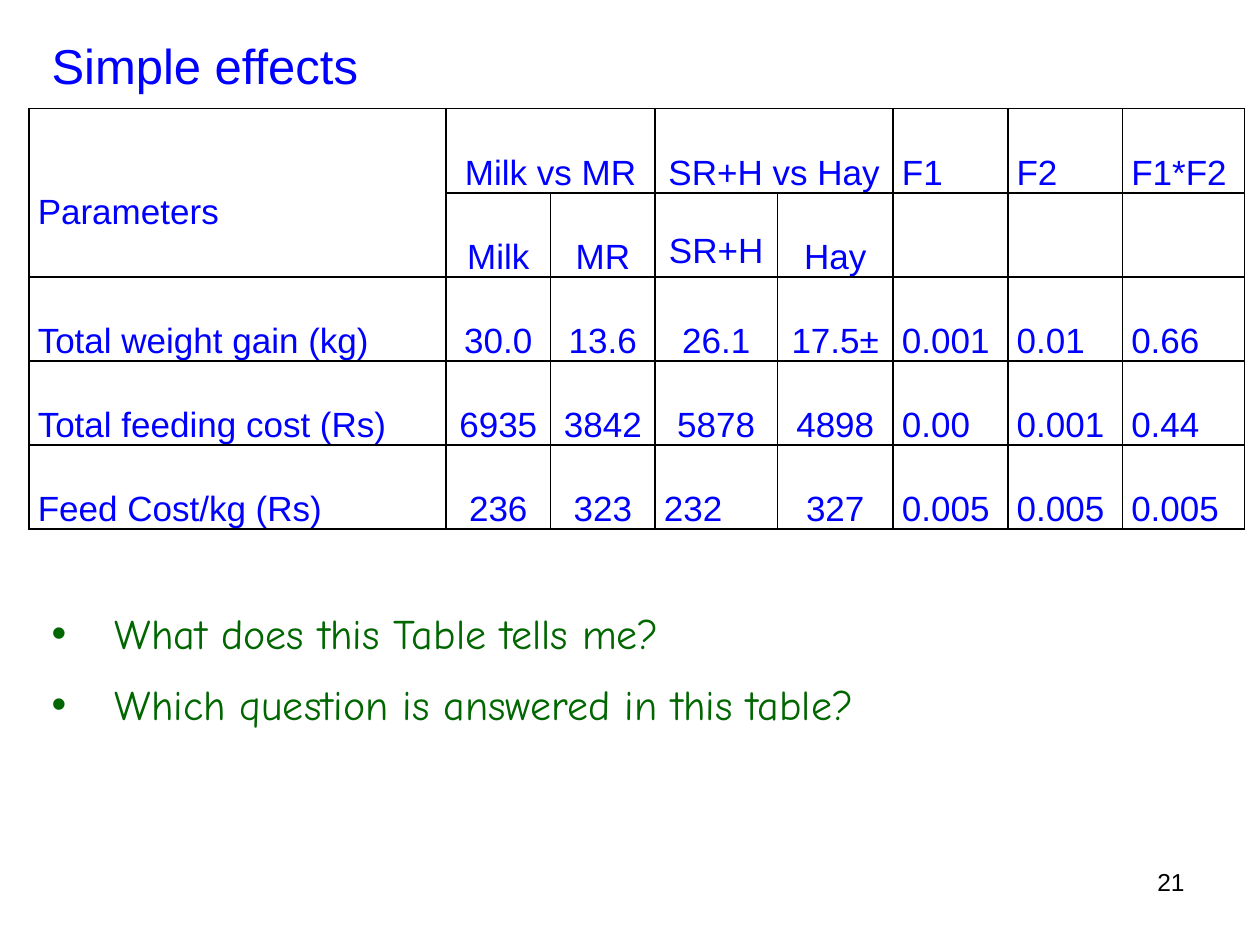
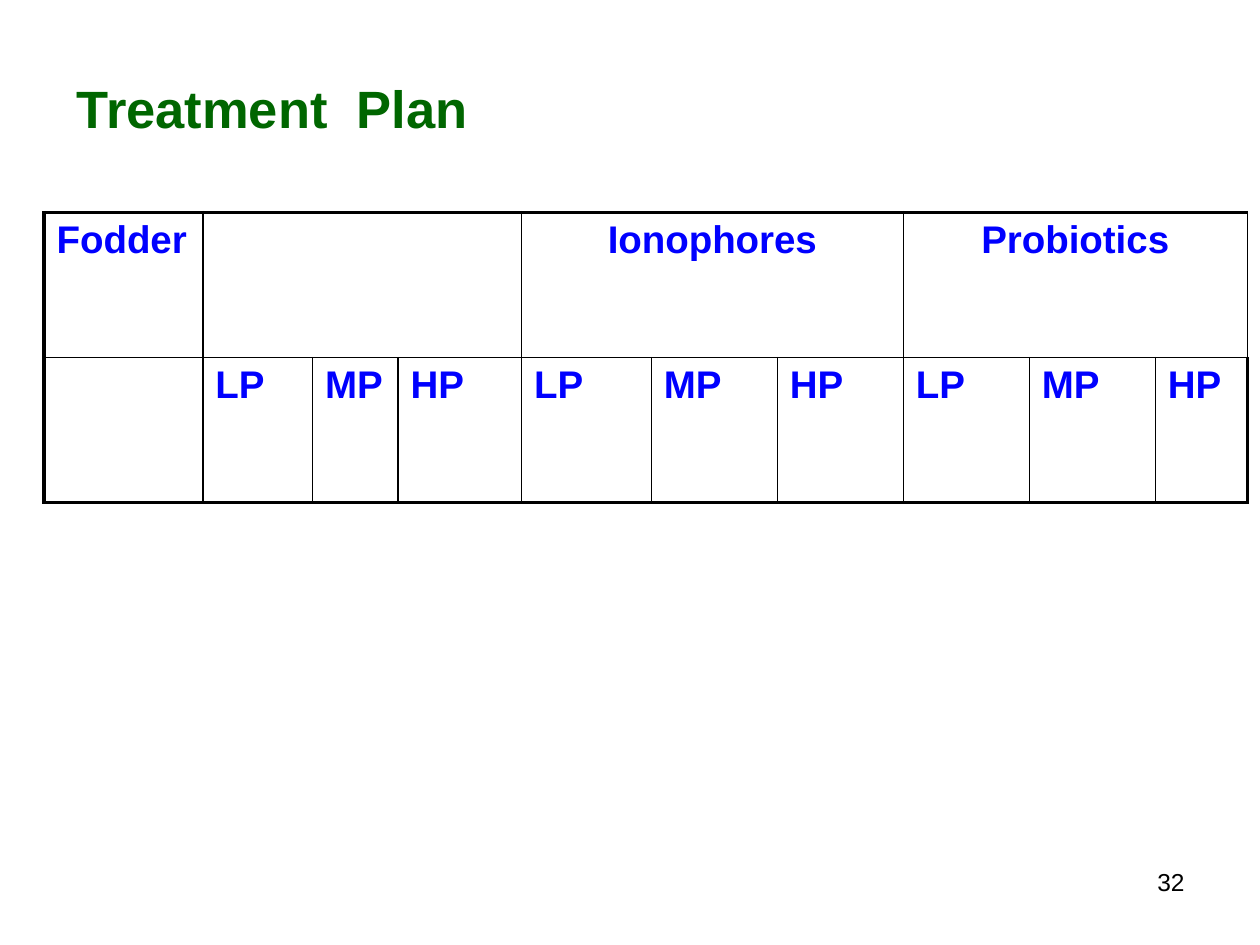
from dataclasses import dataclass

from lxml.etree import SubElement
from pptx import Presentation
from pptx.dml.color import RGBColor
from pptx.enum.text import MSO_ANCHOR, MSO_AUTO_SIZE, PP_ALIGN
from pptx.oxml.ns import qn
from pptx.util import Inches, Pt


@dataclass(frozen=True)
class Theme:
    """Colours, fonts, type sizes and line widths of both slides."""
    blue: str = "0000FF"
    green: str = "006600"
    black: str = "000000"
    sans: str = "Arial"
    hand: str = "Comic Neue"
    number_size: int = 14
    data_size: int = 20
    plan_size: int = 22
    list_size: int = 24
    thin: float = 1
    thick: float = 2.25


THEME = Theme()
WIDTH, HEIGHT = Inches(10), Inches(7.5)
TITLE_AND_BODY, TITLE_ONLY = 1, 5
LEFT, CENTER, RIGHT = PP_ALIGN.LEFT, PP_ALIGN.CENTER, PP_ALIGN.RIGHT

EFFECT_COLUMNS = (3.31, 0.83, 0.83, 0.97, 0.92, 0.91, 0.91, 0.97)
EFFECT_ROWS = (
    ("Parameters", "Milk vs MR", "", "SR+H vs Hay", "", "F1", "F2", "F1*F2"),
    ("", "Milk", "MR", "SR+H", "Hay", "", "", ""),
    ("Total weight gain (kg)", "30.0", "13.6", "26.1", "17.5±", "0.001", "0.01", "0.66"),
    ("Total feeding cost (Rs)", "6935", "3842", "5878", "4898", "0.00", "0.001", "0.44"),
    ("Feed Cost/kg (Rs)", "236", "323", "232", "327", "0.005", "0.005", "0.005"),
)
PLAN_COLUMNS = (1.26, 0.87, 0.68, 0.98, 1.03, 1, 1, 1, 1, 0.73)
PLAN_ROWS = (
    ("Fodder", "", "", "", "Ionophores", "", "", "Probiotics", "", ""),
    ("",) + ("LP", "MP", "HP") * 3,
)


def area(left, top, width, height):
    """Turn percentages of the slide into lengths."""
    return (int(WIDTH * left / 100), int(HEIGHT * top / 100),
            int(WIDTH * width / 100), int(HEIGHT * height / 100))


def place(box, where):
    box.left, box.top, box.width, box.height = area(*where)


def style(para, size, color, font=THEME.sans, bold=False, align=LEFT):
    para.alignment = align
    para.font.name = font
    para.font.size = Pt(size)
    para.font.bold = bold
    para.font.color.rgb = RGBColor.from_string(color)


def add_page(deck, layout, title, where, size, color, bold=False):
    """Add a slide with its title in the title placeholder."""
    page = deck.slides.add_slide(deck.slide_layouts[layout])
    box = page.shapes.title
    place(box, where)
    frame = box.text_frame
    frame.text = title
    frame.word_wrap = False
    frame.auto_size = MSO_AUTO_SIZE.NONE
    frame.vertical_anchor = MSO_ANCHOR.MIDDLE
    style(frame.paragraphs[0], size, color, bold=bold)
    return page


def add_page_number(page, number):
    box = page.shapes.add_textbox(*area(71.7, 91.1, 23.3, 6.9))
    box.text_frame.word_wrap = True
    box.text_frame.text = str(number)
    style(box.text_frame.paragraphs[0], THEME.number_size, THEME.black, align=RIGHT)


def add_questions(page, where, questions):
    """Fill the body placeholder with a bulleted list."""
    box = page.placeholders[1]
    place(box, where)
    frame = box.text_frame
    frame.auto_size = MSO_AUTO_SIZE.NONE
    frame.text = "\n".join(questions)
    for para in frame.paragraphs:
        style(para, THEME.list_size, THEME.green, THEME.hand)
        para.space_before, para.space_after = Pt(0), Pt(12)
        properties = para._p.get_or_add_pPr()
        properties.set("marL", str(Inches(0.5)))
        properties.set("indent", str(-Inches(0.5)))
        SubElement(properties, qn("a:buFont"), typeface=THEME.sans)
        SubElement(properties, qn("a:buChar"), char="•")


def set_borders(cell, widths):
    """Draw the left, right, top and bottom lines of a cell."""
    properties = cell._tc.get_or_add_tcPr()
    for side, width in zip("LRTB", widths):
        line = SubElement(properties, qn(f"a:ln{side}"), w=str(Pt(width)))
        fill = SubElement(line, qn("a:solidFill"))
        SubElement(fill, qn("a:srgbClr"), val=THEME.black)


def add_grid(page, where, columns, rows, size, bold, outline):
    """Add an unfilled table with thin inner lines and the given outline."""
    frame = page.shapes.add_table(len(rows), len(columns), *area(*where))
    table = frame.table
    table.first_row = table.horz_banding = False
    for column, width in zip(table.columns, columns):
        column.width = Inches(width)
    last_row, last_column = len(rows) - 1, len(columns) - 1
    for r, texts in enumerate(rows):
        for c, text in enumerate(texts):
            cell = table.cell(r, c)
            edges = (c == 0, c == last_column, r == 0, r == last_row)
            set_borders(cell, [outline if edge else THEME.thin for edge in edges])
            cell.fill.background()
            cell.text = text
            style(cell.text_frame.paragraphs[0], size, THEME.blue, bold=bold)
    return table


def merge(table, row, column, rows=1, columns=1):
    table.cell(row, column).merge(table.cell(row + rows - 1, column + columns - 1))


def build_effects(deck):
    page = add_page(deck, TITLE_AND_BODY, "Simple effects",
                    (3.1, 3.07, 27.7, 7.6), 28, THEME.blue)
    add_page_number(page, 21)
    table = add_grid(page, (2.3, 11.5, 96.6, 44.4), EFFECT_COLUMNS, EFFECT_ROWS,
                     THEME.data_size, False, THEME.thin)
    # Group means are centred; labels and F columns stay left
    for r in range(len(EFFECT_ROWS)):
        for c in range(len(EFFECT_COLUMNS)):
            cell = table.cell(r, c)
            cell.margin_left = cell.margin_right = Inches(0.07)
            cell.margin_top = cell.margin_bottom = 0
            cell.vertical_anchor = MSO_ANCHOR.BOTTOM
            para = cell.text_frame.paragraphs[0]
            para.alignment = CENTER if 1 <= c <= 4 else LEFT
            para.line_spacing = 2.0
    # Cells that depart from the rule
    table.cell(0, 0).vertical_anchor = MSO_ANCHOR.MIDDLE
    table.cell(1, 3).vertical_anchor = MSO_ANCHOR.TOP
    table.cell(4, 0).text_frame.paragraphs[0].line_spacing = 1.0
    table.cell(4, 3).text_frame.paragraphs[0].alignment = LEFT
    merge(table, 0, 0, rows=2)
    for column in (1, 3):
        merge(table, 0, column, columns=2)
    add_questions(page, (3.1, 63.6, 92.2, 14.4), (
        "What does this Table tells me?",
        "Which question is answered in this table?"))


def build_plan(deck):
    page = add_page(deck, TITLE_ONLY, "Treatment  Plan",
                    (5.1, 7.33, 33.3, 8.13), 30, THEME.green, bold=True)
    add_page_number(page, 32)
    table = add_grid(page, (3.5, 22.5, 95.3, 30.7), PLAN_COLUMNS, PLAN_ROWS,
                     THEME.plan_size, True, THEME.thick)
    # Each supplement spans its three protein levels
    for column in (1, 4, 7):
        table.cell(0, column).text_frame.paragraphs[0].alignment = CENTER
        merge(table, 0, column, columns=3)


def main():
    deck = Presentation()
    deck.slide_width, deck.slide_height = WIDTH, HEIGHT
    build_effects(deck)
    build_plan(deck)
    deck.save("out.pptx")


if __name__ == "__main__":
    main()
